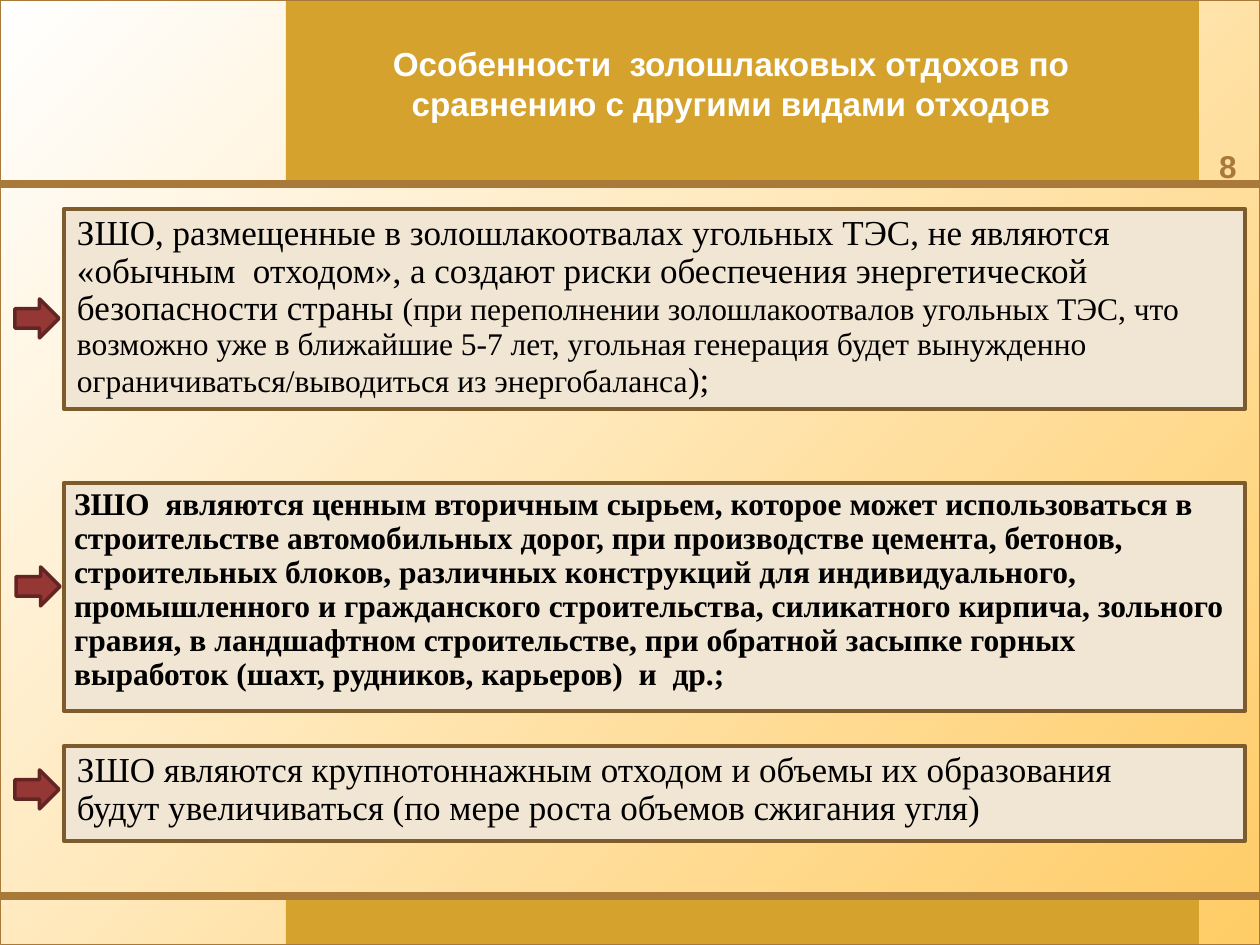
"""Build the slide on the features of ash and slag waste."""
from pptx import Presentation
from pptx.dml.color import RGBColor
from pptx.enum.shapes import MSO_SHAPE
from pptx.enum.text import MSO_ANCHOR, PP_ALIGN
from pptx.util import Emu, Pt

RECT, ARROW = MSO_SHAPE.RECTANGLE, MSO_SHAPE.RIGHT_ARROW
TOP, BOTTOM = MSO_ANCHOR.TOP, MSO_ANCHOR.BOTTOM
LEFT, CENTER = PP_ALIGN.LEFT, PP_ALIGN.CENTER

WHITE = RGBColor(0xFF, 0xFF, 0xFF)
BLACK = RGBColor(0x00, 0x00, 0x00)
AMBER = RGBColor(0xFF, 0xCC, 0x66)
GOLD = RGBColor(0xD5, 0xA3, 0x2D)
BRONZE = RGBColor(0xA8, 0x79, 0x38)
CREAM = RGBColor(0xF1, 0xE5, 0xD4)
BROWN = RGBColor(0x7E, 0x5B, 0x2A)
RED = RGBColor(0x95, 0x37, 0x35)
DARK_RED = RGBColor(0x63, 0x25, 0x23)

SANS, SERIF = "Arial", "Times New Roman"
WIDTH, HEIGHT = 1260, 945
WIDE_INSETS, NARROW_INSETS = (13, 6), (10, 5)

RISKS = [[
    ("ЗШО, размещенные в золошлакоотвалах угольных ТЭС, не являются "
     "«обычным  отходом», а создают риски обеспечения энергетической "
     "безопасности страны ", 20),
    ("(при переполнении золошлакоотвалов угольных ТЭС, что возможно уже "
     "в ближайшие 5-7 лет, угольная генерация будет вынужденно "
     "ограничиваться/выводиться из энергобаланса", 18),
    (");", 20),
]]
RAW_MATERIAL = [[
    ("ЗШО  являются ценным вторичным сырьем, которое может использоваться "
     "в строительстве автомобильных дорог, при производстве цемента, "
     "бетонов, строительных блоков, различных конструкций для "
     "индивидуального, промышленного и гражданского строительства, "
     "силикатного кирпича, зольного гравия, в ландшафтном строительстве, "
     "при обратной засыпке горных выработок (шахт, рудников, карьеров)  "
     "и  др.;", 18),
]]
VOLUMES = [
    [("ЗШО являются крупнотоннажным отходом и объемы их образования", 20)],
    [("будут увеличиваться (по мере роста объемов сжигания угля)", 20)],
]
TITLE = [[("Особенности  золошлаковых отдохов по сравнению с другими "
           "видами отходов", 19)]]


def px(n):
    return Emu(round(n * 914400 / 126))


def write(tf, paragraphs, font=SERIF, color=BLACK, bold=False, align=LEFT,
          anchor=TOP, spacing=0.9, insets=WIDE_INSETS):
    tf.word_wrap = True
    tf.vertical_anchor = anchor
    tf.margin_left = tf.margin_right = px(insets[0])
    tf.margin_top = tf.margin_bottom = px(insets[1])
    for i, runs in enumerate(paragraphs):
        p = tf.add_paragraph() if i else tf.paragraphs[0]
        p.alignment = align
        p.line_spacing = spacing
        for text, size in runs:
            r = p.add_run()
            r.text = text
            r.font.name, r.font.size, r.font.bold = font, Pt(size), bold
            r.font.color.rgb = color


class Deck:
    def __init__(self, prs):
        self.s = prs.slides.add_slide(prs.slide_layouts[6])

    def background(self, start, end):
        fill = self.s.background.fill
        fill.gradient()
        fill.gradient_angle = 315
        for stop, color, position in zip(fill.gradient_stops, (start, end), (0, 1)):
            stop.color.rgb = color
            stop.position = position

    def shape(self, kind, x, y, w, h, fill=None, line=None, weight=0):
        sp = self.s.shapes.add_shape(kind, px(x), px(y), px(w), px(h))
        sp.shadow.inherit = False
        if fill is None:
            sp.fill.background()
        else:
            sp.fill.solid()
            sp.fill.fore_color.rgb = fill
        if line is None:
            sp.line.fill.background()
        else:
            sp.line.color.rgb = line
            sp.line.width = Pt(weight)
        return sp

    def label(self, x, y, w, h, paragraphs, **style):
        sp = self.s.shapes.add_textbox(px(x), px(y), px(w), px(h))
        write(sp.text_frame, paragraphs, font=SANS, bold=True, align=CENTER,
              spacing=1.0, **style)

    def card(self, y, h, paragraphs, **style):
        sp = self.shape(RECT, 64, y, 1181, h, CREAM, BROWN, 2.5)
        write(sp.text_frame, paragraphs, **style)

    def arrow(self, x, y):
        self.shape(ARROW, x, y, 44, 39, RED, DARK_RED, 2)


def main():
    prs = Presentation()
    prs.slide_width, prs.slide_height = px(WIDTH), px(HEIGHT)
    deck = Deck(prs)
    deck.background(WHITE, AMBER)
    for y, h in ((900, 45), (0, 180)):
        deck.shape(RECT, 286, y, 913, h, GOLD)
    for y in (180, 892):
        deck.shape(RECT, 0, y, WIDTH, 8, BRONZE)
    deck.shape(RECT, 0, 0, WIDTH, HEIGHT, line=BRONZE, weight=0.5)

    deck.card(483, 228, RAW_MATERIAL, bold=True, insets=NARROW_INSETS)
    deck.label(287, 37, 888, 93, TITLE, color=WHITE)
    deck.card(209, 200, RISKS)
    deck.card(746, 95, VOLUMES)
    deck.label(1196, 125, 64, 65, [[("8", 18)]], color=BRONZE,
               anchor=BOTTOM, insets=NARROW_INSETS)
    for x, y in ((15, 299), (16, 567), (15, 770)):
        deck.arrow(x, y)
    prs.save("out.pptx")


if __name__ == "__main__":
    main()
